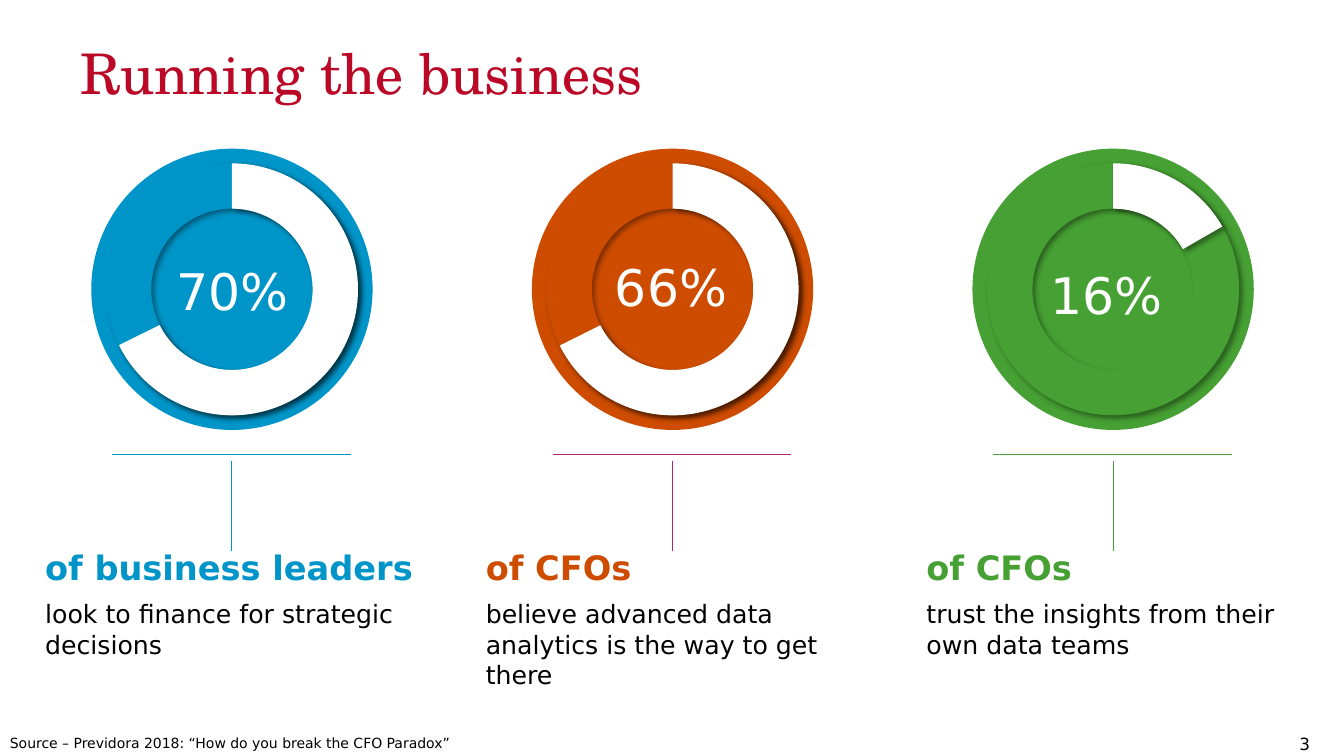
from lxml import etree
from pptx import Presentation
from pptx import util as u
from pptx.dml import color
from pptx.enum import shapes, text
from pptx.oxml import ns

WIDTH, HEIGHT = 13.33, 7.5
FIRST_CENTRE, PITCH = 2.3, 4.37
DIAL_ROW, RULE_ROW, CAPTION_ROW = 2.87, 4.51, 5.38
DISC, RING, RING_BAND = 2.79, 2.5, 0.18
TOP_ANGLE = 270
SANS, SERIF = "DejaVu Sans", "TeX Gyre Schola"
BLACK, WHITE = "000000", "FFFFFF"


def rgb(value):
    return color.RGBColor.from_string(value)


def lengths(*values):
    return [u.Inches(value) for value in values]


def add_effects(shape):
    return etree.SubElement(shape._element.spPr, ns.qn("a:effectLst"))


def add_text(page, place, lines, align=text.PP_ALIGN.LEFT,
             anchor=text.MSO_ANCHOR.TOP, before=0, spacing=None, inset=None):
    box = page.shapes.add_textbox(*lengths(*place))
    frame = box.text_frame
    frame.word_wrap = True
    frame.vertical_anchor = anchor
    if inset is not None:
        frame.margin_left = frame.margin_right = u.Inches(inset)
        frame.margin_top = frame.margin_bottom = u.Inches(inset)
    for index, (words, size, font, hue, bold) in enumerate(lines):
        para = frame.add_paragraph() if index else frame.paragraphs[0]
        para.alignment = align
        para.space_before = u.Pt(before)
        if spacing:
            para.line_spacing = spacing
        span = para.add_run()
        span.text = words
        span.font.size = u.Pt(size)
        span.font.name = font
        span.font.bold = bold
        span.font.color.rgb = rgb(hue)


def add_round(page, kind, centre, size, hue):
    shape = page.shapes.add_shape(
        kind, *lengths(centre - size / 2, DIAL_ROW - size / 2, size, size))
    shape.shadow.inherit = False
    shape.fill.solid()
    shape.fill.fore_color.rgb = rgb(hue)
    shape.line.fill.background()
    return shape


def cast_shadow(shape):
    shape.shadow.inherit = True
    shadow = etree.SubElement(
        add_effects(shape), ns.qn("a:outerShdw"), blurRad=str(u.Pt(4)),
        dist=str(u.Pt(3)), dir="2700000", algn="tl", rotWithShape="0")
    tint = etree.SubElement(shadow, ns.qn("a:srgbClr"), val=BLACK)
    etree.SubElement(tint, ns.qn("a:alpha"), val="40000")


def add_line(page, start, end, hue):
    line = page.shapes.add_connector(
        shapes.MSO_CONNECTOR.STRAIGHT, *lengths(*start, *end))
    line.line.color.rgb = rgb(hue)
    line.line.width = u.Pt(0.75)
    add_effects(line)


def add_dial(page, centre, hue, end_angle, turn):
    add_round(page, shapes.MSO_SHAPE.OVAL, centre, DISC, hue)
    ring = add_round(page, shapes.MSO_SHAPE.DONUT, centre, RING, hue)
    ring.adjustments[0] = RING_BAND
    cast_shadow(ring)
    arc = add_round(page, shapes.MSO_SHAPE.BLOCK_ARC, centre, RING, WHITE)
    arc.rotation = turn
    for index, angle in enumerate((TOP_ANGLE, end_angle)):
        arc.adjustments[index] = (angle - turn) % 360 * 0.6
    arc.adjustments[2] = RING_BAND
    cast_shadow(arc)


def add_share(page, column, share, nudge, end_angle, turn, hue, rule_hue,
              group, finding):
    centre = FIRST_CENTRE + PITCH * column
    add_line(page, (centre, RULE_ROW + 0.06), (centre, RULE_ROW + 0.96), rule_hue)
    add_line(page, (centre - 1.19, RULE_ROW), (centre + 1.18, RULE_ROW), rule_hue)
    add_dial(page, centre, hue, end_angle, turn)
    right, down = nudge
    add_text(page, (centre - 0.88 + right, DIAL_ROW - 0.82 + down, 1.77, 1.65),
             [(share, 36, SANS, WHITE, False)], text.PP_ALIGN.CENTER,
             text.MSO_ANCHOR.MIDDLE, before=8)
    add_text(page, (centre - 1.95, CAPTION_ROW, 3.9, 1.68),
             [(group, 24, SANS, hue, True), (finding, 18, SANS, BLACK, False)],
             before=8)


def main():
    deck = Presentation()
    deck.slide_width, deck.slide_height = lengths(WIDTH, HEIGHT)
    page = deck.slides.add_slide(deck.slide_layouts[6])
    add_text(page, (0.8, 0.35, 12, 1.25),
             [("Running the business", 40, SERIF, "BB0826", False)],
             spacing=1.05, inset=0)
    shares = [
        ("70%", (0, 0.01), 153.7, 159.6, "0095C8", "0095C8",
         "of business leaders", "look to finance for strategic decisions"),
        ("66%", (-0.02, -0.03), 153.5, 153.2, "CE4C00", "AE2573",
         "of CFOs", "believe advanced data analytics is the way to get there"),
        ("16%", (-0.07, 0.04), 330.1, 325.9, "46A033", "46A033",
         "of CFOs", "trust the insights from their own data teams"),
    ]
    for column, share in enumerate(shares):
        add_share(page, column, *share)
    add_text(page, (0, 7.06, 5.27, 0.44),
             [("Source – Previdora 2018: “How do you break the CFO Paradox”",
               10, SANS, BLACK, False)], anchor=text.MSO_ANCHOR.BOTTOM)
    add_text(page, (12.79, 7.23, 0.54, 0.27), [("3", 12, SANS, BLACK, False)])
    deck.save("out.pptx")


if __name__ == "__main__":
    main()
